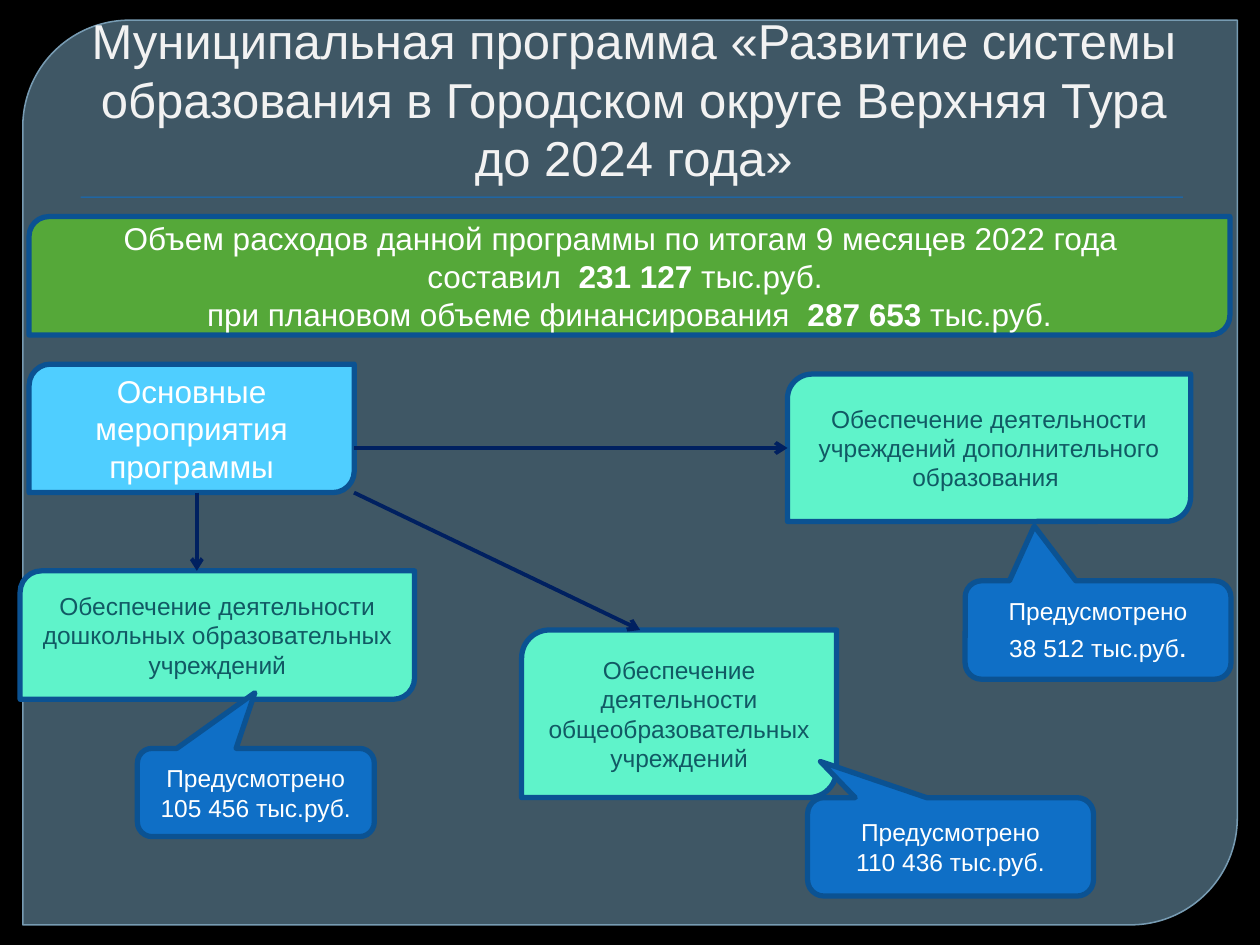
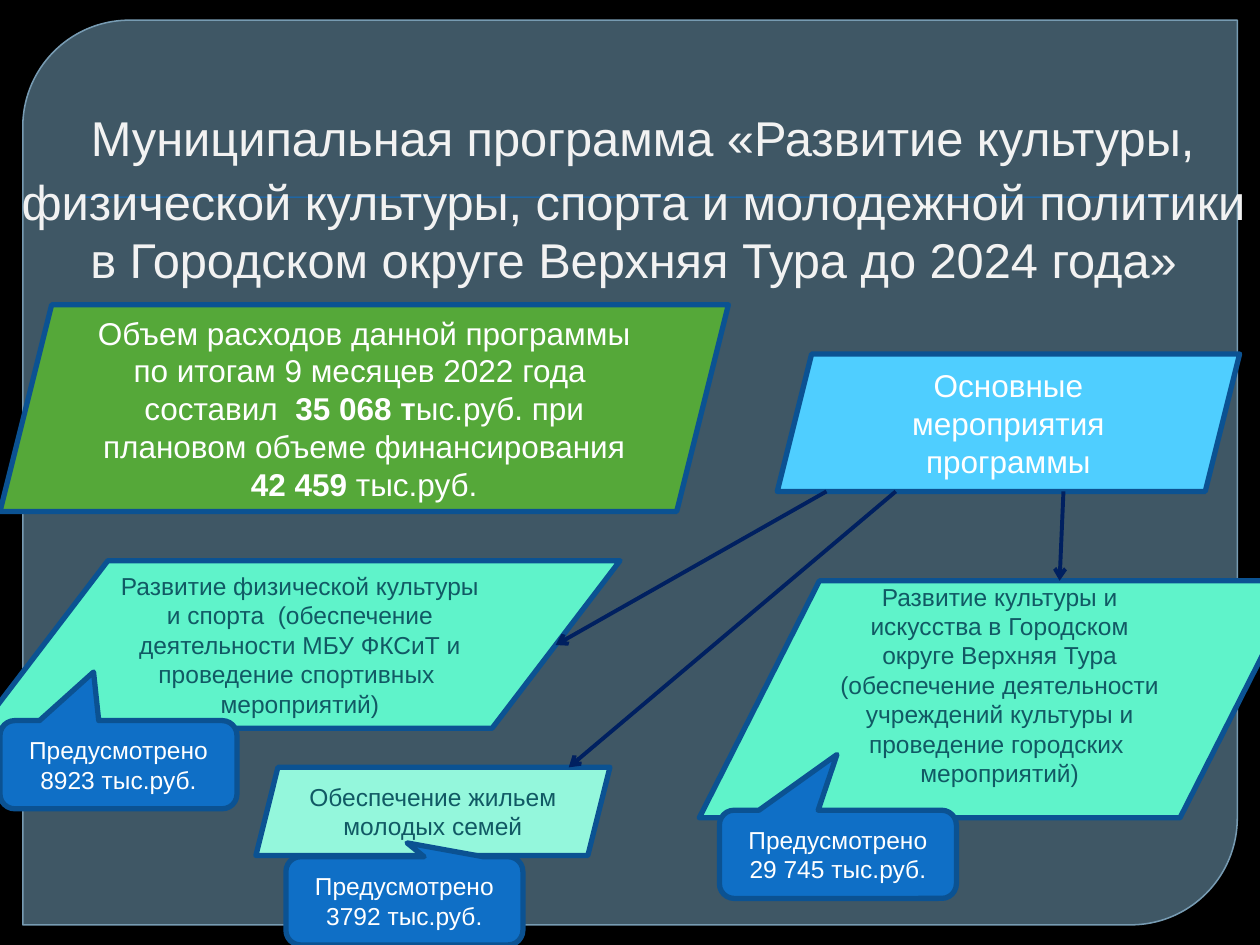
"""Builds two slides on the spending of municipal programmes in Verkhnyaya Tura."""
from lxml import etree
from pptx import Presentation
from pptx.dml.color import RGBColor
from pptx.enum.shapes import MSO_CONNECTOR, MSO_SHAPE
from pptx.enum.text import MSO_ANCHOR, PP_ALIGN
from pptx.oxml.ns import qn
from pptx.util import Pt

ROUNDED = MSO_SHAPE.ROUND_2_DIAG_RECTANGLE
SLANTED = MSO_SHAPE.PARALLELOGRAM
FLOW_DATA = MSO_SHAPE.FLOWCHART_DATA
CALLOUT = MSO_SHAPE.ROUNDED_RECTANGULAR_CALLOUT
RECTANGLE = MSO_SHAPE.RECTANGLE
STRAIGHT = MSO_CONNECTOR.STRAIGHT
CENTER = PP_ALIGN.CENTER
MIDDLE, BOTTOM = MSO_ANCHOR.MIDDLE, MSO_ANCHOR.BOTTOM

COLORS = {
    "background": "000000",
    "panel": "61869C",
    "panel_edge": "779BB2",
    "title": "F2F2F2",
    "rule": "0F6FC6",
    "edge": "0B5292",
    "arrow": "002060",
    "budget": "55A839",
    "heading": "4FCEFF",
    "activity": "5FF3CA",
    "activity_light": "94F7DC",
    "activity_text": "115964",
    "sum": "0F6FC6",
    "white": "FFFFFF",
}
PLAIN = {}
BOLD = {"bold": True}
HEADING = [[("Основные мероприятия программы", PLAIN)]]
SMALL_SUM = (135.4, 50.4)
LARGE = (18, "white")
SMALL = (14, "activity_text")

programmes = [
    {
        "title": [("Муниципальная программа «Развитие системы образования "
                   "в Городском округе Верхняя Тура до 2024 года»", PLAIN)],
        "title_at": (36, 20.2, 648, 90),
        "title_size": 28,
        "blocks": [
            (ROUNDED, (16.6, 208.1, 185.8, 73.4), "heading", LARGE, HEADING),
            (ROUNDED, (16.6, 123.8, 686.2, 67.7), "budget", LARGE, [
                [("Объем расходов данной программы по итогам 9 месяцев 2022 года  ", PLAIN)],
                [("составил  ", PLAIN), ("231 127 ", BOLD), ("тыс.руб. ", PLAIN)],
                [("при плановом объеме финансирования ", PLAIN),
                 (" 287 653 ", BOLD), ("тыс.руб.", PLAIN)]]),
            (ROUNDED, (11.5, 326.2, 225.4, 73.4), "activity", SMALL, [
                [("Обеспечение деятельности дошкольных образовательных учреждений", PLAIN)]]),
            (ROUNDED, (298.1, 360, 180, 95.8), "activity", SMALL, [
                [("Обеспечение деятельности общеобразовательных учреждений", PLAIN)]]),
            (ROUNDED, (450, 213.8, 230.4, 84.2), "activity", SMALL, [
                [("Обеспечение деятельности учреждений дополнительного образования ", PLAIN)]]),
        ],
        "arrows": [
            (202.4, 256, 450, 256),
            (112.5, 281.5, 112.5, 326.2),
            (202.3, 281.5, 365.8, 360),
        ],
        "sums": [
            ((78.5, 427.7, *SMALL_SUM), (-0.004, -1.132), [("105 456 тыс.руб.", PLAIN)]),
            ((461.5, 455.8, 163.4, 56.2), (-0.455, -0.868), [("110 436 тыс.руб.", PLAIN)]),
            ((551.5, 331.9, 151.9, 56.2), (-0.24, -1.057),
             [("38 512 тыс.руб", PLAIN), (".", {"size": 18, "font": "Roboto Slab"})]),
        ],
    },
    {
        "title": [(" ", {"size": 41.4, "font": "Roboto Slab"}),
                  ("Муниципальная программа «Развитие культуры, физической культуры, "
                   "спорта и молодежной политики в Городском округе Верхняя Тура "
                   "до 2024 года»", PLAIN)],
        "title_at": (0, 21.6, 720, 146.9),
        "title_size": 27.9,
        "blocks": [
            (SLANTED, (0, 174.2, 416.2, 118.1), "budget", LARGE, [
                [("Объем расходов данной программы по итогам 9 месяцев 2022 года  "
                  "составил  ", PLAIN),
                 ("35 068 т", BOLD),
                 ("ыс.руб. при плановом объеме финансирования ", PLAIN),
                 ("42 459 ", BOLD), ("тыс.руб.", PLAIN)]]),
            (SLANTED, (444.2, 202.3, 264.2, 78.5), "heading", LARGE, HEADING),
            (FLOW_DATA, (-11.5, 320.4, 365.8, 95.8), "activity", SMALL, [
                [("Развитие физической культуры и спорта  (обеспечение деятельности "
                  "МБУ ФКСиТ и проведение спортивных  мероприятий)", PLAIN)]]),
            (FLOW_DATA, (399.6, 331.9, 343.4, 135.4), "activity", SMALL, [
                [("Развитие культуры и искусства в Городском округе Верхняя Тура "
                  "(обеспечение деятельности учреждений культуры и проведение "
                  "городских  мероприятий)", PLAIN)]]),
            (SLANTED, (146.2, 438.5, 202.3, 50.4), "activity_light", SMALL, [
                [("Обеспечение жильем молодых семей", PLAIN)]]),
        ],
        "arrows": [
            (607.7, 280.8, 605.5, 331.9),
            (472.3, 280.8, 317.5, 368.6),
            (511.9, 280.8, 325, 438.5),
        ],
        "sums": [
            ((411.1, 463, *SMALL_SUM), (-0.004, -1.132), [("29 745 тыс.руб.", PLAIN)]),
            ((163.4, 489.6, *SMALL_SUM), (0.011, -0.658), [("3792 тыс.руб.", PLAIN)]),
            ((0, 411.8, *SMALL_SUM), (-0.105, -1.051), [("8923 тыс.руб.", PLAIN)]),
        ],
    },
]


def write(frame, paragraphs, size, color, anchor=MIDDLE):
    """Fill a text frame with centred paragraphs, run by run."""
    frame.word_wrap = True
    frame.vertical_anchor = anchor
    for index, runs in enumerate(paragraphs):
        paragraph = frame.add_paragraph() if index else frame.paragraphs[0]
        paragraph.alignment = CENTER
        for text, style in runs:
            run = paragraph.add_run()
            run.text = text
            run.font.name = style.get("font", "Arial")
            run.font.size = Pt(style.get("size", size))
            run.font.bold = style.get("bold", False)
            run.font.color.rgb = RGBColor.from_string(COLORS[color])


def add_block(slide, kind, at, fill, edge="edge", width=3):
    """Add a preset shape with a solid fill and, if an edge is named, an outline."""
    block = slide.shapes.add_shape(kind, *map(Pt, at))
    block.shadow.inherit = False
    block.fill.solid()
    block.fill.fore_color.rgb = RGBColor.from_string(COLORS[fill])
    if edge:
        block.line.color.rgb = RGBColor.from_string(COLORS[edge])
        block.line.width = Pt(width)
    else:
        block.line.fill.background()
    return block


deck = Presentation()
deck.slide_width, deck.slide_height = Pt(720), Pt(540)

for programme in programmes:
    slide = deck.slides.add_slide(deck.slide_layouts[6])
    slide.background.fill.solid()
    slide.background.fill.fore_color.rgb = RGBColor.from_string(COLORS["background"])

    panel = add_block(slide, ROUNDED, (13, 11.5, 694, 517), "panel", "panel_edge", 0.87)
    panel.adjustments[0] = 0.118
    panel_color = panel._element.spPr.find(qn("a:solidFill"))[0]
    etree.SubElement(panel_color, qn("a:alpha"), val="65000")
    add_block(slide, RECTANGLE, (46, 112.3, 630, 0.7), "rule", edge=None)

    title = slide.shapes.add_textbox(*map(Pt, programme["title_at"])).text_frame
    write(title, [programme["title"]], programme["title_size"], "title", BOTTOM)
    title.paragraphs[0]._p.get_or_add_pPr().set("marL", str(Pt(4.3)))

    for kind, at, fill, (size, color), paragraphs in programme["blocks"]:
        block = add_block(slide, kind, at, fill)
        write(block.text_frame, paragraphs, size, color)
        if kind == FLOW_DATA and at[3] > 100:
            block.text_frame.margin_bottom = Pt(20.4)

    for ends in programme["arrows"]:
        arrow = slide.shapes.add_connector(STRAIGHT, *map(Pt, ends))
        arrow.line.color.rgb = RGBColor.from_string(COLORS["arrow"])
        arrow.line.width = Pt(2.25)
        etree.SubElement(arrow.line._get_or_add_ln(), qn("a:tailEnd"), type="arrow")
        etree.SubElement(arrow._element.spPr, qn("a:effectLst"))

    for at, pointer, amount in programme["sums"]:
        planned = add_block(slide, CALLOUT, at, "sum")
        planned.adjustments[0], planned.adjustments[1] = pointer
        write(planned.text_frame, [[("Предусмотрено", PLAIN)], amount], 14, "white")

deck.save("out.pptx")
